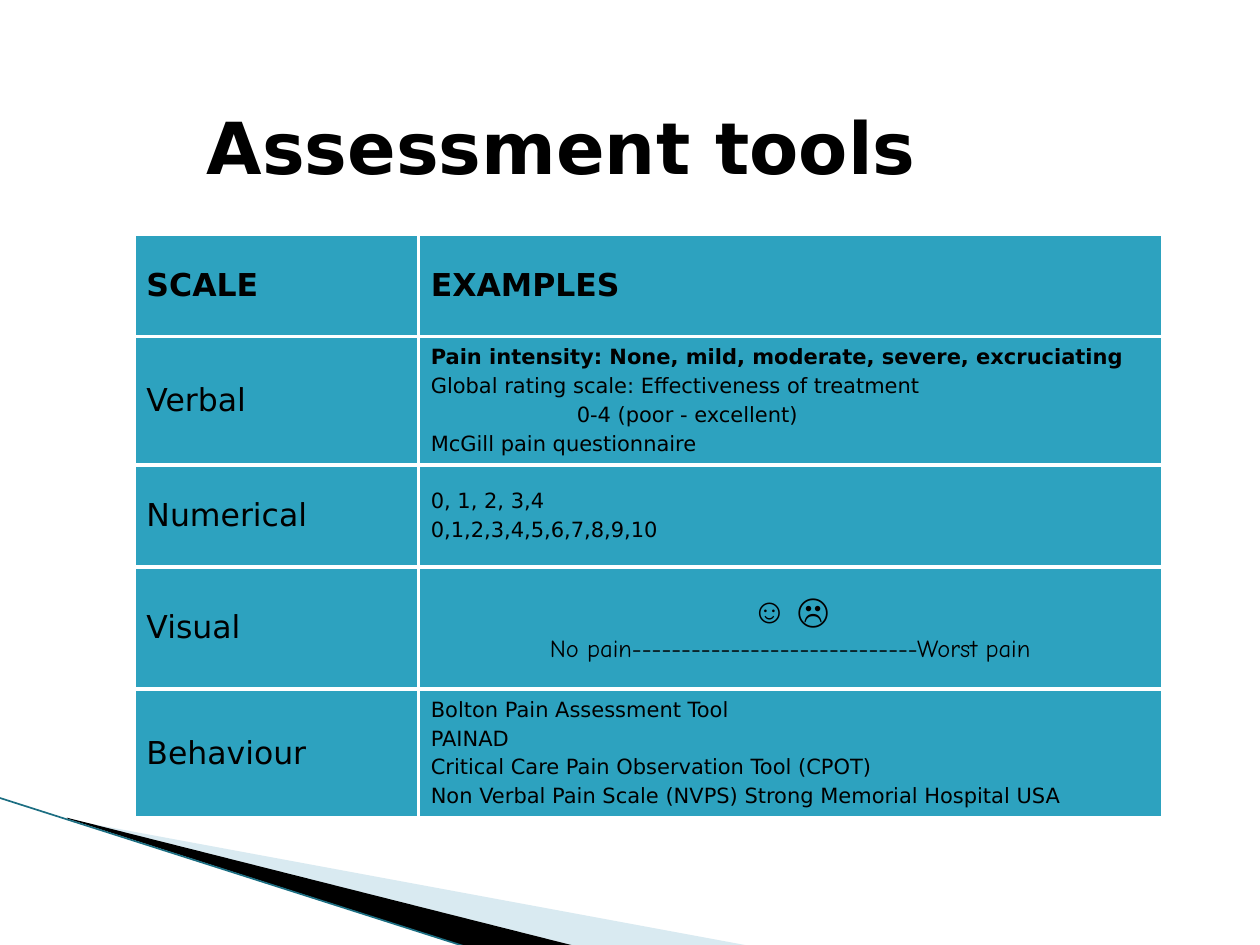
from dataclasses import dataclass

from lxml import etree
from pptx import Presentation
from pptx.dml.color import RGBColor
from pptx.enum import shapes, text
from pptx.oxml.ns import qn
from pptx.util import Pt


@dataclass(frozen=True)
class Theme:
    black: str = "000000"
    white: str = "FFFFFF"
    teal: str = "2DA2BF"
    pale: str = "A0CBDC"
    edge: str = "1C6E82"
    font: str = "DejaVu Sans"
    symbol_font: str = "Arial"
    scale_font: str = "Comic Neue"
    title: float = 41
    label: float = 18
    example: float = 12
    face: float = 20
    visual: float = 14


theme = Theme()


def add_run(paragraph, words, size, bold=False, font=theme.font):
    run = paragraph.add_run()
    run.text = words
    run.font.name = font
    run.font.size = Pt(size)
    run.font.bold = bold
    run.font.color.rgb = RGBColor.from_string(theme.black)


def add_borders(cell):
    properties = cell._tc.get_or_add_tcPr()
    for side in ("lnL", "lnR", "lnT", "lnB"):
        border = etree.SubElement(properties, qn(f"a:{side}"), w=str(Pt(2.25)))
        fill = etree.SubElement(border, qn("a:solidFill"))
        etree.SubElement(fill, qn("a:srgbClr"), val=theme.white)


deck = Presentation()
deck.slide_width, deck.slide_height = Pt(720), Pt(540)
slide = deck.slides.add_slide(deck.slide_layouts[5])

wedges = [
    (theme.pale, 40, [(39.6, 468.5), (428.4, 540.5), (328.3, 540.5), (39.6, 468)]),
    (theme.black, 100, [(38.2, 467.3), (329, 540.7), (267.8, 541.4), (38.9, 468)]),
]
for color, opacity, corners in wedges:
    points = [(Pt(x), Pt(y)) for x, y in corners]
    builder = slide.shapes.build_freeform(*points[0], scale=1.0)
    builder.add_line_segments(points[1:], close=True)
    wedge = builder.convert_to_shape()
    wedge.shadow.inherit = False
    wedge.line.fill.background()
    wedge.fill.solid()
    wedge.fill.fore_color.rgb = RGBColor.from_string(color)
    if opacity < 100:
        tint = wedge.fill._xPr.find(".//" + qn("a:srgbClr"))
        etree.SubElement(tint, qn("a:alpha"), val=str(opacity * 1000))

edge = slide.shapes.add_connector(
    shapes.MSO_CONNECTOR.STRAIGHT, Pt(-0.7), Pt(455.8), Pt(267.4), Pt(541.4))
edge.line.color.rgb = RGBColor.from_string(theme.edge)
edge.line.width = Pt(0.95)
etree.SubElement(edge._element.spPr, qn("a:effectLst"))

title = slide.shapes.title
title.left, title.top, title.width, title.height = Pt(12.2), Pt(47.5), Pt(672), Pt(72)
title.text_frame.margin_left = Pt(106)
title.text_frame.vertical_anchor = text.MSO_ANCHOR.MIDDLE
heading = title.text_frame.paragraphs[0]
heading.alignment = text.PP_ALIGN.LEFT
add_run(heading, "Assessment tools", theme.title, True)

answer_range = "0-4 (poor - excellent)"
tools = [
    ("SCALE", ["EXAMPLES"]),
    ("Verbal", ["Pain intensity: None, mild, moderate, severe, excruciating",
                "Global rating scale: Effectiveness of treatment",
                answer_range,
                "McGill pain questionnaire"]),
    ("Numerical", ["0, 1, 2, 3,4", "0,1,2,3,4,5,6,7,8,9,10"]),
    ("Visual", ["☺ ☹", "No pain-----------------------------Worst pain"]),
    ("Behaviour", ["Bolton Pain Assessment Tool",
                   "PAINAD",
                   "Critical Care Pain Observation Tool (CPOT)",
                   "Non Verbal Pain Scale (NVPS) Strong Memorial Hospital USA"]),
]
column_widths = [162.5, 425.5]
row_heights = [58.3, 73.4, 58.3, 69.8, 73.4]
table = slide.shapes.add_table(
    len(tools), 2, Pt(76.5), Pt(134), Pt(sum(column_widths)), Pt(sum(row_heights))).table
table.first_row = table.horz_banding = False
for column, width in zip(table.columns, column_widths):
    column.width = Pt(width)

for row, (scale, examples) in enumerate(tools):
    table.rows[row].height = Pt(row_heights[row])
    header = row == 0
    for cell in table.rows[row].cells:
        add_borders(cell)
        cell.fill.solid()
        cell.fill.fore_color.rgb = RGBColor.from_string(theme.teal)
        cell.vertical_anchor = text.MSO_ANCHOR.MIDDLE
    add_run(table.cell(row, 0).text_frame.paragraphs[0], scale, theme.label, header)

    frame = table.cell(row, 1).text_frame
    for number, example in enumerate(examples):
        paragraph = frame.paragraphs[0] if number == 0 else frame.add_paragraph()
        size = theme.label if header else theme.example
        if scale == "Visual":
            size = theme.visual
            paragraph.alignment = text.PP_ALIGN.CENTER
        if number:
            paragraph.space_before = Pt(size * 0.2)
        if example == answer_range:
            paragraph.level = 1
            paragraph._p.get_or_add_pPr().set("marL", str(Pt(83.4)))
        if scale != "Visual":
            add_run(paragraph, example, size, header or example.startswith("Pain intensity"))
        elif number == 0:
            add_run(paragraph, "☺ ", theme.face, font=theme.symbol_font)
            add_run(paragraph, "☹", theme.face, True, theme.symbol_font)
        else:
            add_run(paragraph, example, size, font=theme.scale_font)

deck.save("out.pptx")
